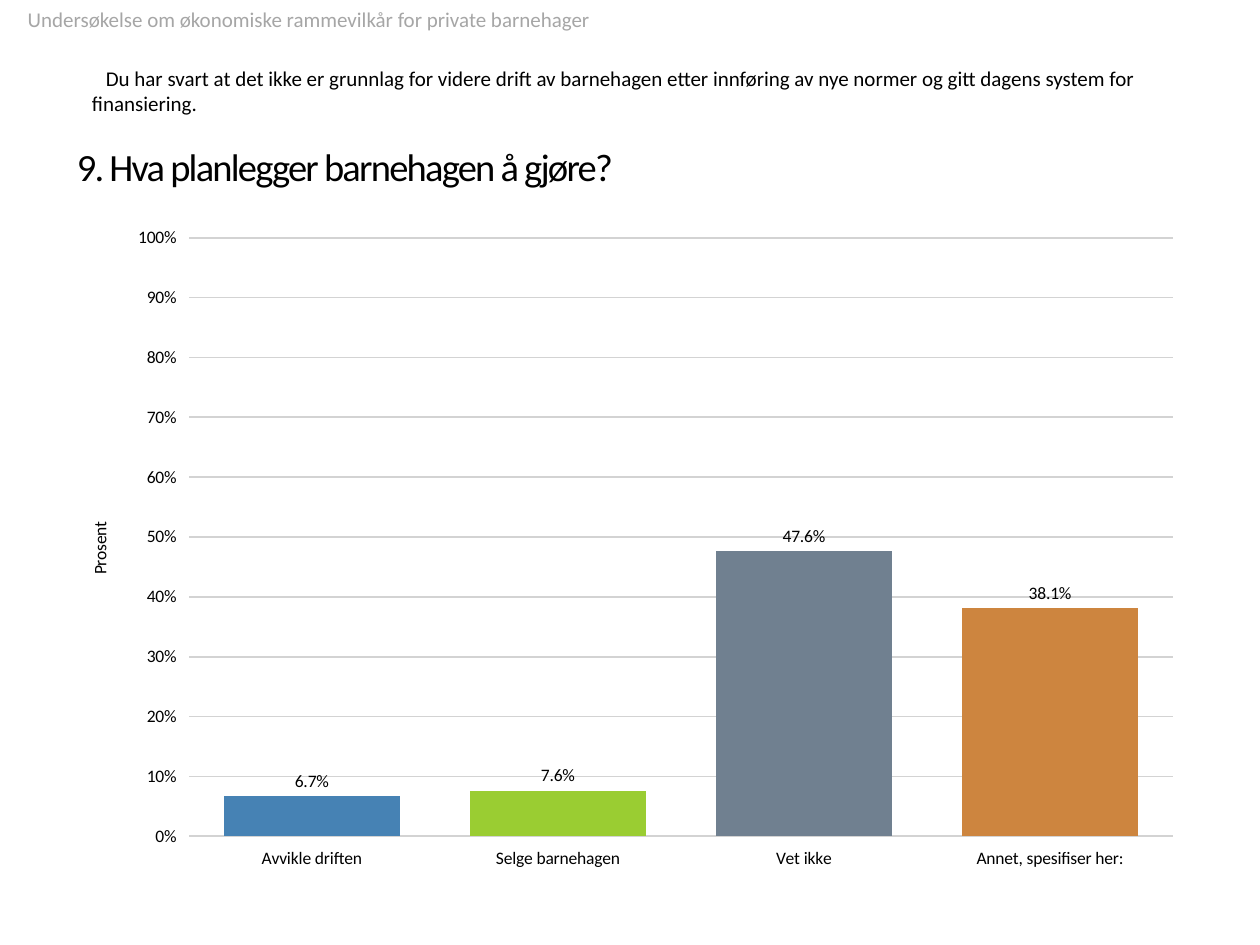
"""Build the survey slide on what the kindergartens plan to do."""
from dataclasses import dataclass

from lxml import etree
from pptx import Presentation
from pptx.chart.chart import Chart
from pptx.chart.data import CategoryChartData
from pptx.dml.color import RGBColor
from pptx.enum.chart import XL_CHART_TYPE, XL_LABEL_POSITION, XL_TICK_MARK
from pptx.enum.text import MSO_ANCHOR, MSO_AUTO_SIZE, PP_ALIGN
from pptx.oxml import parse_xml
from pptx.oxml.ns import nsdecls, qn
from pptx.slide import Slide
from pptx.text.text import Font
from pptx.util import Inches, Pt

COLUMN = XL_CHART_TYPE.COLUMN_CLUSTERED
OUTSIDE = XL_LABEL_POSITION.OUTSIDE_END
CROSS = XL_TICK_MARK.CROSS
TOP, MIDDLE = MSO_ANCHOR.TOP, MSO_ANCHOR.MIDDLE
NO_FIT = MSO_AUTO_SIZE.NONE
LEFT = PP_ALIGN.LEFT
SLIDE_W, SLIDE_H = Inches(10), Inches(7.5)


@dataclass(frozen=True)
class Theme:
    font: str = "Calibri"
    text: str = "000000"
    muted: str = "A6A6A6"
    grid: str = "D3D3D3"
    title_size: float = 22
    body_size: float = 12
    chart_size: float = 10


@dataclass(frozen=True)
class Box:
    """Place on the slide, as shares of its size."""
    x: float
    y: float
    w: float
    h: float

    def emu(self) -> tuple[int, int, int, int]:
        return (int(self.x * SLIDE_W), int(self.y * SLIDE_H),
                int(self.w * SLIDE_W), int(self.h * SLIDE_H))


@dataclass(frozen=True)
class TextBlock:
    idx: int
    box: Box
    text: str
    size: float
    color: str
    anchor: MSO_ANCHOR = MIDDLE
    margin_top: float = 0.05
    left: float = 0
    first: float = 0
    spacing: int = 0


@dataclass(frozen=True)
class Answer:
    label: str
    share: float
    color: str


THEME = Theme()
BLOCKS = [
    TextBlock(0, Box(0.051, 0.136, 0.9, 0.08), "9. Hva planlegger barnehagen å gjøre?",
              THEME.title_size, THEME.text, spacing=-100),
    TextBlock(1, Box(0.051, 0.032, 0.898, 0.095),
              "Du har svart at det ikke er grunnlag for videre drift av barnehagen etter "
              "innføring av nye normer og gitt dagens system for finansiering.",
              THEME.body_size, THEME.text, margin_top=0.29, left=0.12, first=0.11),
    TextBlock(2, Box(0, 0, 1, 0.033),
              "Undersøkelse om økonomiske rammevilkår for private barnehager",
              THEME.body_size, THEME.muted, anchor=TOP, left=0.12),
]
CHART_BOX = Box(0.051, 0.227, 0.898, 0.704)
PLOT_BOX = Box(0.11, 0.035, 0.87, 0.9)
ANSWERS = [
    Answer("Avvikle driften", 0.067, "4682B4"),
    Answer("Selge barnehagen", 0.076, "9ACD32"),
    Answer("Vet ikke", 0.476, "708090"),
    Answer("Annet, spesifiser her:", 0.381, "CD853F"),
]


def style_font(font: Font, size: float, color: str) -> None:
    font.name, font.size, font.bold = THEME.font, Pt(size), False
    font.color.rgb = RGBColor.from_string(color)


def fill_placeholder(s: Slide, block: TextBlock) -> None:
    sp = s.placeholders[block.idx]
    sp.left, sp.top, sp.width, sp.height = block.box.emu()
    tf = sp.text_frame
    tf.word_wrap, tf.auto_size = True, NO_FIT
    tf.vertical_anchor = block.anchor
    tf.margin_top = Inches(block.margin_top)
    p = tf.paragraphs[0]
    p.alignment, p.space_before = LEFT, Pt(0)
    pPr = p._p.get_or_add_pPr()
    pPr.set("marL", str(Inches(block.left)))
    pPr.set("indent", str(Inches(block.first)))
    etree.SubElement(pPr, qn("a:buNone"))
    r = p.add_run()
    r.text = block.text
    style_font(r.font, block.size, block.color)
    if block.spacing:
        r._r.get_or_add_rPr().set("spc", str(block.spacing))


def place_plot(chart: Chart, box: Box) -> None:
    plot_area = chart._chartSpace.chart.plotArea
    for old in plot_area.findall(qn("c:layout")):
        plot_area.remove(old)
    sizes = "".join(f'<c:{k} val="{getattr(box, k)}"/>' for k in "xywh")
    plot_area.insert(0, parse_xml(
        f'<c:layout {nsdecls("c")}><c:manualLayout><c:layoutTarget val="inner"/>'
        f'<c:xMode val="edge"/><c:yMode val="edge"/>{sizes}</c:manualLayout></c:layout>'))


def add_answer_chart(s: Slide, answers: list[Answer]) -> None:
    data = CategoryChartData(number_format="0.0%")
    data.categories = [a.label for a in answers]
    data.add_series("Series 1", [a.share for a in answers])
    chart = s.shapes.add_chart(COLUMN, *CHART_BOX.emu(), data).chart
    chart.has_legend = chart.has_title = False
    style_font(chart.font, THEME.chart_size, THEME.text)
    place_plot(chart, PLOT_BOX)

    for axis in (chart.category_axis, chart.value_axis):
        axis.major_tick_mark = CROSS
        axis.format.line.fill.background()
        style_font(axis.tick_labels.font, THEME.chart_size, THEME.text)
    axis = chart.value_axis
    axis.minimum_scale, axis.maximum_scale, axis.major_unit = 0, 1, 0.1
    axis.tick_labels.number_format = "0%"
    axis.tick_labels.number_format_is_linked = False
    axis.has_major_gridlines = True
    line = axis.major_gridlines.format.line
    line.width, line.color.rgb = Pt(1), RGBColor.from_string(THEME.grid)
    r = axis.axis_title.text_frame.paragraphs[0].add_run()
    r.text = "Prosent"
    style_font(r.font, THEME.chart_size, THEME.text)

    plot = chart.plots[0]
    plot.gap_width, plot.vary_by_categories = 40, False
    plot.has_data_labels = True
    labels = plot.data_labels
    labels.show_value, labels.position = True, OUTSIDE
    labels.number_format, labels.number_format_is_linked = "0.0%", False
    style_font(labels.font, THEME.chart_size, THEME.text)
    for i, answer in enumerate(answers):
        fill = plot.series[0].points[i].format.fill
        fill.solid()
        fill.fore_color.rgb = RGBColor.from_string(answer.color)


def main() -> None:
    prs = Presentation()
    prs.slide_width, prs.slide_height = SLIDE_W, SLIDE_H
    s = prs.slides.add_slide(prs.slide_layouts[3])
    for block in BLOCKS:
        fill_placeholder(s, block)
    add_answer_chart(s, ANSWERS)
    prs.save("out.pptx")


if __name__ == "__main__":
    main()
